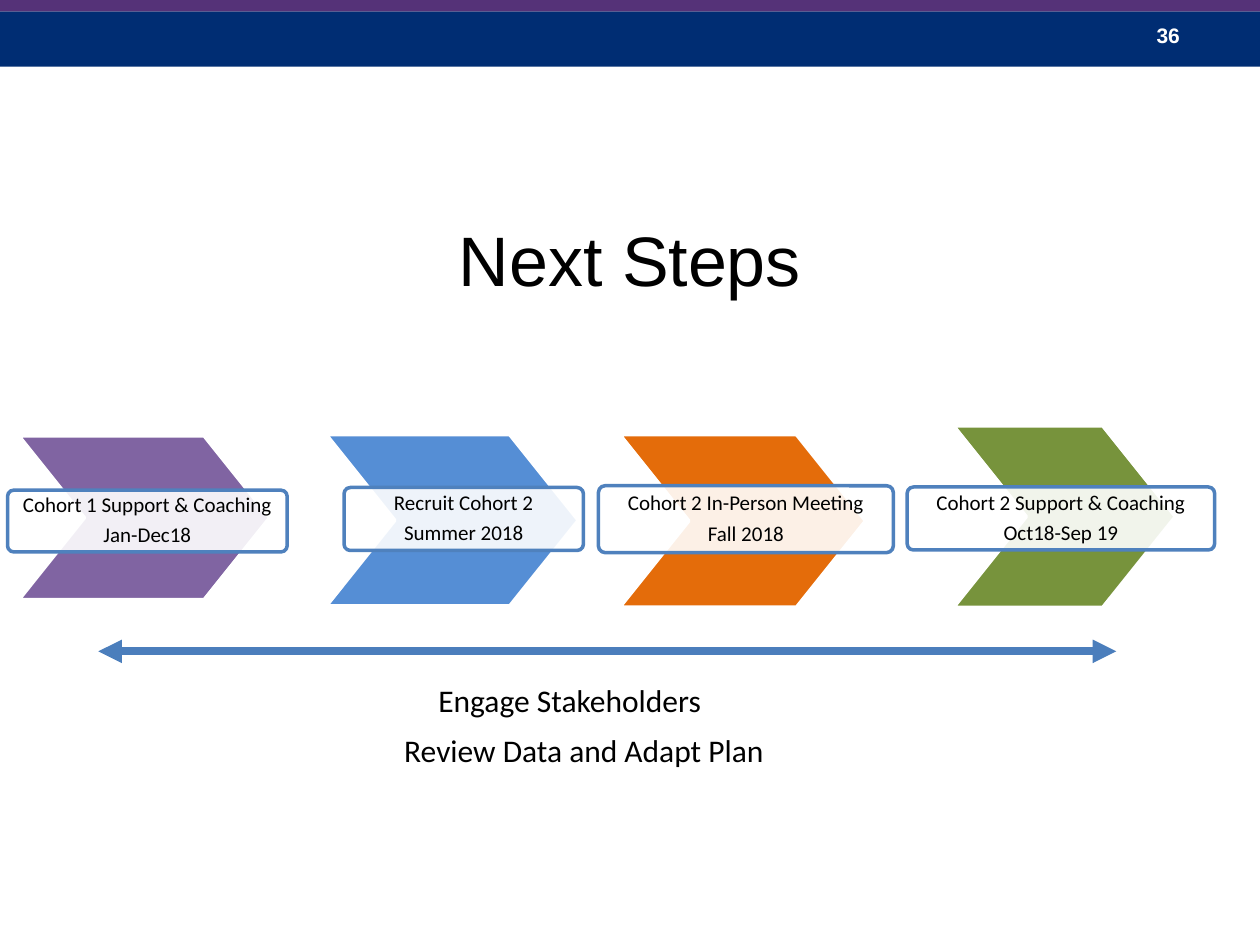
import pptx
import pptx.dml.color
import pptx.enum.shapes
import pptx.enum.text
import pptx.oxml
import pptx.oxml.ns
import pptx.util

Pt = pptx.util.Pt
RGB = pptx.dml.color.RGBColor.from_string
SHAPE = pptx.enum.shapes.MSO_SHAPE
ALIGN = pptx.enum.text.PP_ALIGN
ANCHOR = pptx.enum.text.MSO_ANCHOR

THEME = {
    "navy": "002D73", "violet": "553278", "white": "FFFFFF", "black": "000000",
    "card_line": "4F81BD", "arrow": "4B7EBC", "card_opacity": 90,
    "heading_font": "Arial", "body_font": "Calibri",
    "title": 40, "activity": 18, "label": 12, "outline": 2, "arrow_width": 4.5,
}
BANDS = [("navy", (0, 6.5, 720, 31.7)), ("violet", (0, -2.2, 720, 8.7))]
PAGE_NUMBER = ("36", (653.8, 9.4, 54, 28.8))
TITLE = ("Next Steps", (36, 113.8, 648, 67.7))
STEPS = [
    (["Cohort 1 Support & Coaching", "Jan-Dec18"], "8064A2",
     (10.8, 249.1, 143.3, 93.6), (4.3, 280.1, 159.8, 35.3)),
    (["Recruit Cohort 2", "Summer 2018"], "558ED5",
     (186.5, 248.4, 144, 97.9), (196.6, 278.6, 136.8, 36)),
    (["Cohort 2 In-Person Meeting", "Fall 2018"], "E46C0A",
     (354.2, 248.4, 140.4, 98.6), (342, 277.6, 168.5, 38.2)),
    (["Cohort 2 Support & Coaching", "Oct18-Sep 19"], "77933C",
     (545, 243.4, 126.7, 103.7), (518.4, 278.3, 175.7, 36)),
]
SPAN = (56.2, 372.2, 637.9, 372.2)
ACTIVITIES = [
    ("Engage Stakeholders", (243.4, 385.9, 272.2, 28.8)),
    ("Review Data and Adapt Plan", (223.9, 414, 272.2, 28.8)),
]


def set_all(target, values):
    """Set every attribute named in a dict of format values."""
    for name, value in values.items():
        setattr(target, name, value)


def write(shape, lines, size, font, color="black", bold=False, frame=None, paragraph=None):
    """Fill a shape with equally formatted paragraphs."""
    text = shape.text_frame
    set_all(text, {"word_wrap": True, **(frame or {})})
    text.text = "\n".join(lines)
    for item in text.paragraphs:
        set_all(item, paragraph or {})
        set_all(item.font, {"size": Pt(THEME[size]), "name": THEME[font], "bold": bold})
        item.font.color.rgb = RGB(THEME[color])


def add_text(slide, line, place, *style, **options):
    """Add a text box holding one line."""
    write(slide.shapes.add_textbox(*map(Pt, place)), [line], *style, **options)


def add_block(slide, kind, place, fill, line=None, adjustment=None):
    """Add a flat filled shape, outlined when a line colour is given."""
    block = slide.shapes.add_shape(kind, *map(Pt, place))
    block.shadow.inherit = False
    block.fill.solid()
    block.fill.fore_color.rgb = RGB(fill)
    if line:
        block.line.color.rgb = RGB(line)
        block.line.width = Pt(THEME["outline"])
    else:
        block.line.fill.background()
    if adjustment is not None:
        block.adjustments[0] = adjustment
    return block


def add_step(slide, lines, color, chevron_place, card_place):
    """Add a chevron with its translucent label card."""
    add_block(slide, SHAPE.CHEVRON, chevron_place, color, THEME["white"], 0.4)
    card = add_block(slide, SHAPE.ROUNDED_RECTANGLE, card_place,
                     THEME["white"], THEME["card_line"], 0.1)
    tint = card.fill._xPr.find(".//" + pptx.oxml.ns.qn("a:srgbClr"))
    alpha = tint.makeelement(pptx.oxml.ns.qn("a:alpha"),
                             {"val": str(THEME["card_opacity"] * 1000)})
    tint.append(alpha)
    margins = dict.fromkeys(
        ["margin_left", "margin_top", "margin_right", "margin_bottom"], Pt(6.5))
    write(card, lines, "label", "body_font",
          frame={"vertical_anchor": ANCHOR.MIDDLE, **margins},
          paragraph={"alignment": ALIGN.CENTER, "line_spacing": 0.9, "space_after": Pt(4.2)})


def add_span(slide):
    """Add the double-headed arrow below the steps."""
    arrow = slide.shapes.add_connector(
        pptx.enum.shapes.MSO_CONNECTOR.STRAIGHT, *map(Pt, SPAN))
    arrow.line.color.rgb = RGB(THEME["arrow"])
    arrow.line.width = Pt(THEME["arrow_width"])
    outline = arrow.line._get_or_add_ln()
    for end in ("a:headEnd", "a:tailEnd"):
        outline.append(outline.makeelement(pptx.oxml.ns.qn(end), {"type": "triangle"}))
    outline.addnext(outline.makeelement(pptx.oxml.ns.qn("a:effectLst"), {}))


def main():
    """Build the slide and save it."""
    deck = pptx.Presentation()
    set_all(deck, {"slide_width": Pt(720), "slide_height": Pt(540)})
    slide = deck.slides.add_slide(deck.slide_layouts[6])
    for color, place in BANDS:
        add_block(slide, SHAPE.RECTANGLE, place, THEME[color])
    add_text(slide, *PAGE_NUMBER, "label", "heading_font", "white", True)
    add_text(slide, *TITLE, "title", "heading_font",
             frame={"vertical_anchor": ANCHOR.MIDDLE},
             paragraph={"alignment": ALIGN.CENTER})
    for step in STEPS:
        add_step(slide, *step)
    add_span(slide)
    for activity in ACTIVITIES:
        add_text(slide, *activity, "activity", "body_font")
    deck.save("out.pptx")


if __name__ == "__main__":
    main()
